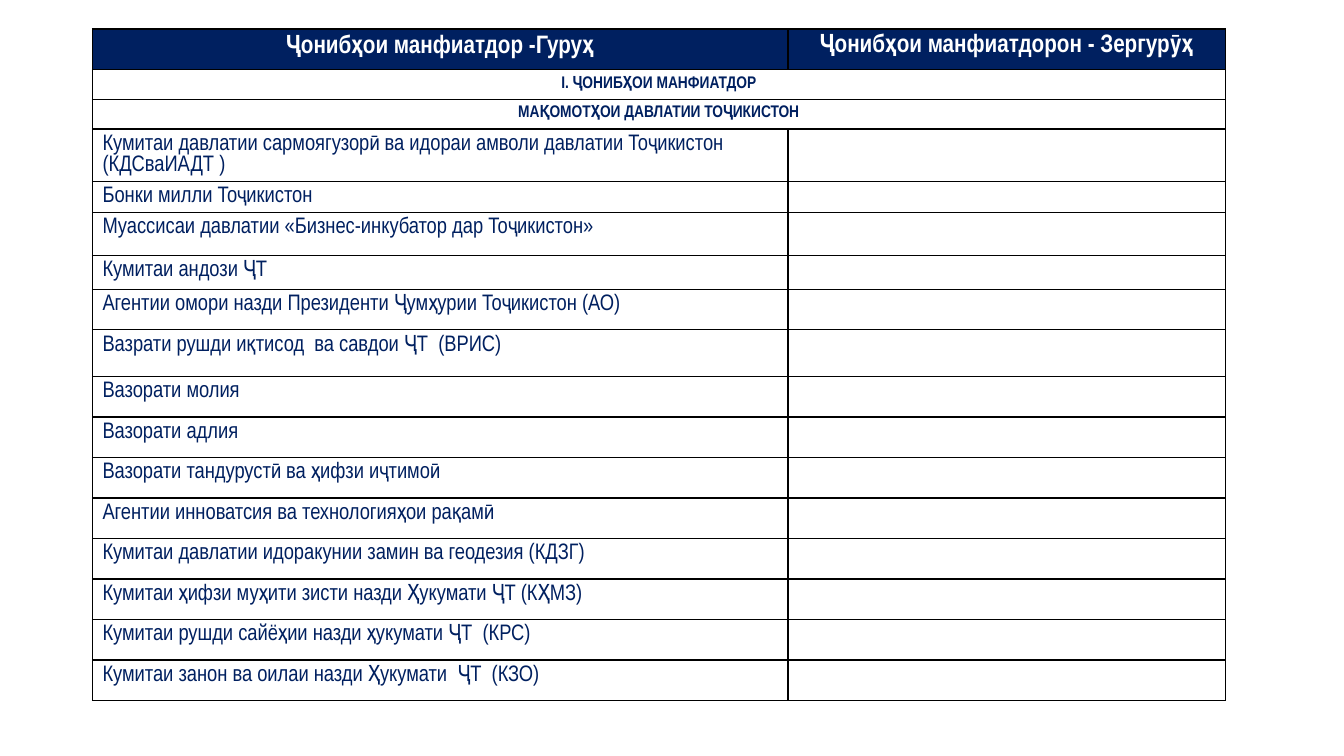
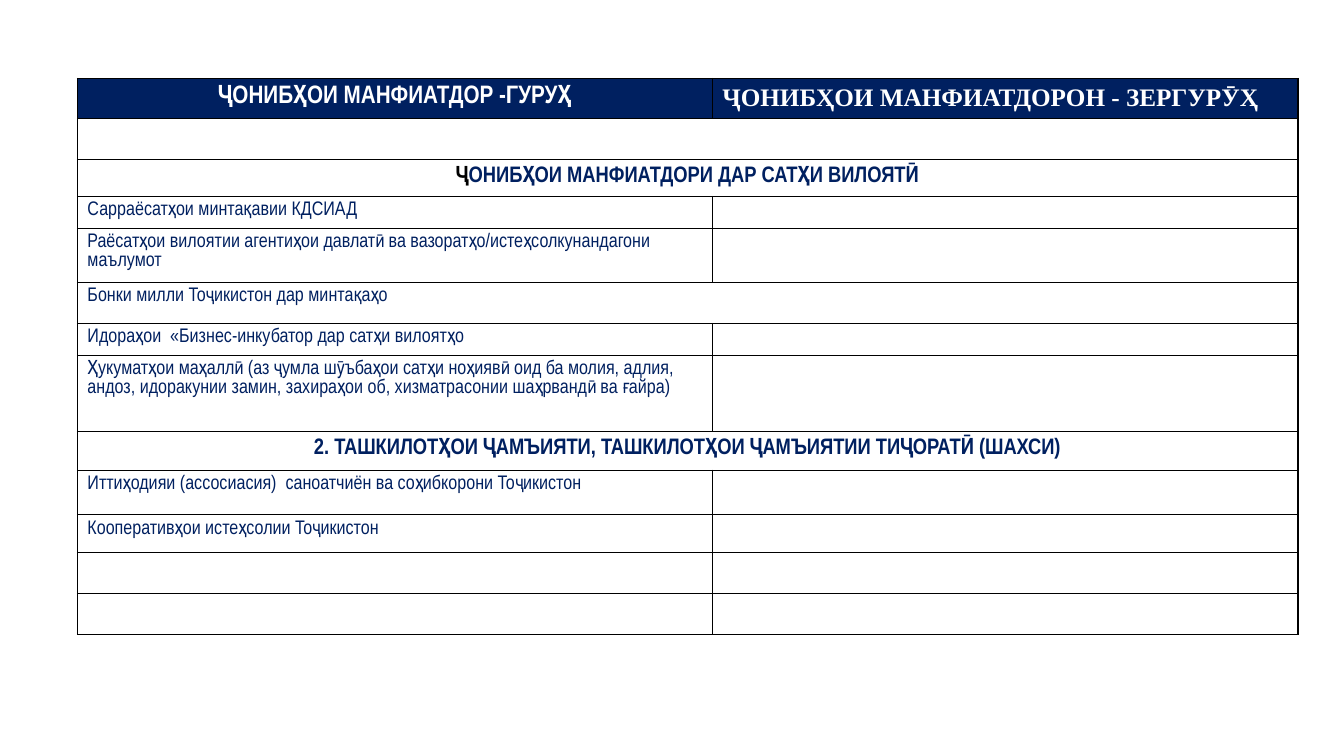
import pptx
import pptx.util
import pptx.dml.color
import pptx.enum.text
import pptx.oxml.ns
from lxml import etree

Cm, Pt = pptx.util.Cm, pptx.util.Pt
RGB = pptx.dml.color.RGBColor
MID = pptx.enum.text.PP_ALIGN.CENTER
LEFT = pptx.enum.text.PP_ALIGN.LEFT
qn = pptx.oxml.ns.qn

NAVY = RGB(0x00, 0x20, 0x60)
WHITE = RGB(0xFF, 0xFF, 0xFF)
BLACK = RGB(0x00, 0x00, 0x00)
BODY = "Arial Narrow"
SERIF = "Times New Roman"

# Paragraph formats
WIDE = dict(alignment=MID, line_spacing=1.07, space_after=Pt(8))
FLAT = dict(alignment=MID)
PLAIN = dict(alignment=LEFT)


def apply(obj, vals):
    for key, val in vals.items():
        setattr(obj, key, val)


class Deck:
    """Holds the table style and the current slide."""

    def __init__(self):
        self.prs = pptx.Presentation()
        self.prs.slide_width = Cm(33.87)
        self.prs.slide_height = Cm(19.05)
        self.slide = None

    def page(self):
        self.slide = self.prs.slides.add_slide(self.prs.slide_layouts[6])

    def edge(self, cell):
        """Draw thin black lines round a cell."""
        props = cell._tc.get_or_add_tcPr()
        for pos, side in enumerate("LRTB"):
            line = etree.Element(qn("a:ln" + side), w=str(Pt(1)))
            fill = etree.SubElement(line, qn("a:solidFill"))
            etree.SubElement(fill, qn("a:srgbClr"), val=str(BLACK))
            props.insert(pos, line)

    def grid(self, left, top, cols, rows):
        """Add a table with plain white cells."""
        frame = self.slide.shapes.add_table(
            len(rows), len(cols), Cm(left), Cm(top),
            Cm(sum(cols)), Cm(sum(rows)))
        table = frame.table
        apply(table, dict(first_row=False, horz_banding=False))
        for col, width in zip(table.columns, cols):
            col.width = Cm(width)
        for row, height in zip(table.rows, rows):
            row.height = Cm(height)
        for cell in table.iter_cells():
            cell.fill.solid()
            cell.fill.fore_color.rgb = WHITE
            self.edge(cell)
        return table

    def label(self, cell, text, para, size, color=NAVY, bold=False,
              name=BODY, lead=""):
        """Fill a cell; lead is an opening part set in black."""
        box = cell.text_frame
        for pos, line in enumerate(text.split("\n")):
            par = box.add_paragraph() if pos else box.paragraphs[0]
            apply(par, para)
            for part, tint in ((lead, BLACK), (line, color)):
                if part:
                    run = par.add_run()
                    run.text = part
                    apply(run.font, dict(size=Pt(size), bold=bold, name=name))
                    run.font.color.rgb = tint

    def head(self, table, first, last, para, name):
        """Fill the navy top row."""
        cells = table.rows[0].cells
        for cell in cells:
            cell.fill.fore_color.rgb = NAVY
        self.label(cells[0], first, WIDE, 18, WHITE, True)
        self.label(cells[1], last, para, 18, WHITE, True, name)

    def span(self, table, row):
        cell = table.cell(row, 0)
        cell.merge(table.cell(row, 1))
        return cell

    def band(self, table, row, text, size, lead=""):
        """Fill a full-width section row."""
        self.label(self.span(table, row), text, WIDE, size, bold=True,
                   lead=lead)

    def items(self, table, start, texts, size):
        """List texts down the first column, the second stays empty."""
        for row, text in enumerate(texts, start):
            self.label(table.cell(row, 0), text, PLAIN, size)
            blank = table.cell(row, 1).text_frame.paragraphs[0]
            etree.SubElement(blank._p, qn("a:endParaRPr"), sz="1200")


STATE = [
    "Кумитаи давлатии сармоягузорӣ ва идораи амволи давлатии Тоҷикистон\n"
    "(КДСваИАДТ )",
    "Бонки милли Тоҷикистон",
    "Муассисаи давлатии «Бизнес-инкубатор дар Тоҷикистон»",
    "Кумитаи андози ҶТ",
    "Агентии омори назди Президенти Ҷумҳурии Тоҷикистон (АО)",
    "Вазрати рушди иқтисод  ва савдои ҶТ  (ВРИС)",
    "Вазорати молия",
    "Вазорати адлия",
    "Вазорати тандурустӣ ва ҳифзи иҷтимоӣ",
    "Агентии инноватсия ва технологияҳои рақамӣ",
    "Кумитаи давлатии идоракунии замин ва геодезия (КДЗГ)",
    "Кумитаи ҳифзи муҳити зисти назди Ҳукумати ҶТ (КҲМЗ)",
    "Кумитаи рушди сайёҳии назди ҳукумати ҶТ  (КРС)",
    "Кумитаи занон ва оилаи назди Ҳукумати  ҶТ  (КЗО)",
]
AREA = [
    "Сарраёсатҳои минтақавии КДСИАД",
    "Раёсатҳои вилоятии агентиҳои давлатӣ ва "
    "вазоратҳо/истеҳсолкунандагони маълумот",
    "Бонки милли Тоҷикистон дар минтақаҳо",
    "Идораҳои  «Бизнес-инкубатор дар сатҳи вилоятҳо",
    "Ҳукуматҳои маҳаллӣ (аз ҷумла шӯъбаҳои сатҳи ноҳиявӣ оид ба молия, "
    "адлия, андоз, идоракунии замин, захираҳои об, хизматрасонии "
    "шаҳрвандӣ ва ғайра)",
]
UNION = [
    "Иттиҳодияи (ассосиасия)  саноатчиён ва соҳибкорони Тоҷикистон",
    "Кооперативҳои истеҳсолии Тоҷикистон",
]


def main():
    deck = Deck()

    # State bodies
    deck.page()
    table = deck.grid(2.33, 0.73, [17.53, 11.02], [
        1.03, 0.74, 0.75, 1.31, 0.78, 1.08, 0.86, 1.02, 1.18] + [1.02] * 8)
    deck.head(table, "Ҷонибҳои манфиатдор -Гуруҳ",
              "Ҷонибҳои манфиатдорон - Зергурӯҳ", FLAT, BODY)
    deck.band(table, 1, "I. ҶОНИБҲОИ МАНФИАТДОР", 12)
    deck.band(table, 2, "МАҚОМОТҲОИ ДАВЛАТИИ ТОҶИКИСТОН", 12)
    deck.items(table, 3, STATE, 16)

    # Regional bodies and associations
    deck.page()
    table = deck.grid(1.95, 1.98, [16, 14.76], [
        1.01, 1.03, 0.93, 0.81, 1.36, 1.03, 0.81, 1.92, 0.97, 1.12, 0.96,
        1.03, 1.03])
    deck.head(table, "ҶОНИБҲОИ МАНФИАТДОР -ГУРУҲ",
              "ҶОНИБҲОИ МАНФИАТДОРОН - ЗЕРГУРӮҲ", PLAIN, SERIF)
    deck.span(table, 1)
    deck.band(table, 2, "ОНИБҲОИ МАНФИАТДОРИ ДАР САТҲИ ВИЛОЯТӢ", 16, "Ҷ")
    deck.items(table, 3, AREA, 14)
    deck.span(table, 5)
    deck.band(table, 8, "2. ТАШКИЛОТҲОИ ҶАМЪИЯТИ, ТАШКИЛОТҲОИ ҶАМЪИЯТИИ "
              "ТИҶОРАТӢ (ШАХСИ)", 16)
    deck.items(table, 9, UNION, 14)

    deck.prs.save("out.pptx")


if __name__ == "__main__":
    main()
